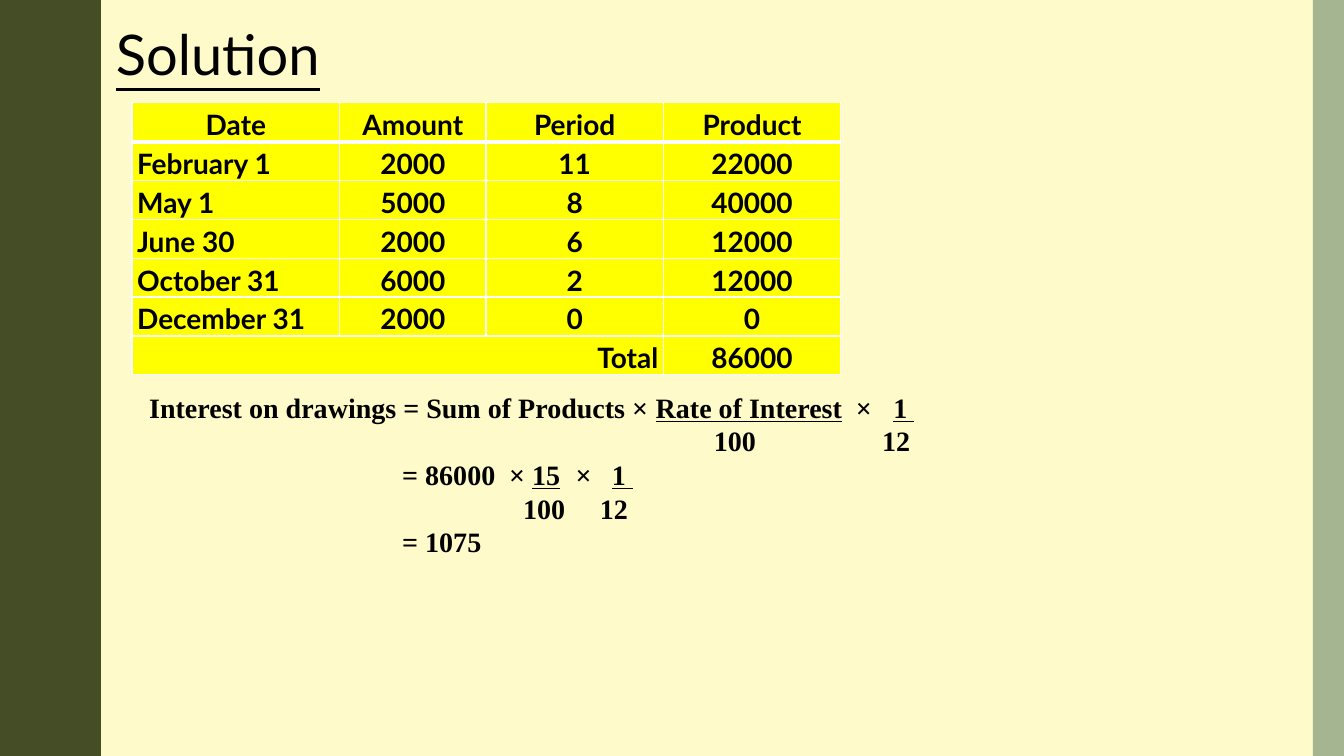
"""Build the interest on drawings solution slide."""
from lxml import etree
from pptx import Presentation
from pptx.dml.color import RGBColor
from pptx.enum.shapes import MSO_SHAPE as SHAPE
from pptx.enum.text import MSO_ANCHOR as ANCHOR, PP_ALIGN as ALIGN
from pptx.oxml.ns import qn
from pptx.util import Inches, Pt

TITLE = "Solution"
ROWS = [
    ("Date", "Amount", "Period", "Product"),
    ("February 1", "2000", "11", "22000"),
    ("May 1", "5000", "8", "40000"),
    ("June 30", "2000", "6", "12000"),
    ("October 31", "6000", "2", "12000"),
    ("December 31", "2000", "0", "0"),
    ("Total", "", "", "86000"),
]
COLS = [2.06, 1.45, 1.76, 1.76]
ROW_H = 0.38
FORMULA = [
    ([7.01, 7.38], [("Interest on drawings = Sum of Products × ", False),
                    ("Rate of Interest", True), ("\t×\t", False), ("1 ", True)]),
    ([5.6, 7.27], [("\t100\t12", False)]),
    ([2.51, 3.57, 4.23, 4.59], [("\t= 86000\t× ", False), ("15", True),
                                ("\t×\t", False), ("1 ", True)]),
    ([3.71, 4.47], [("\t100\t12", False)]),
    ([2.51], [("\t= 1075", False)]),
]
HALF_WAVE = [(0.78, 0), (0.78, 0.07), (0.79, 0.14), (0.8, 0.2), (0.81, 0.25),
             (0.83, 0.29), (0.85, 0.33), (0.87, 0.38), (0.89, 0.42), (0.91, 0.46),
             (0.93, 0.5), (0.95, 0.55), (0.96, 0.61), (0.97, 0.68), (0.97, 0.75)]
PERIOD, WAVES = 1.5, 5
WIDTH, HEIGHT = 13.33, 7.5


def color(value):
    return RGBColor.from_string(value)


def paint(sp, fill):
    sp.shadow.inherit = False
    sp.fill.solid()
    sp.fill.fore_color.rgb = color(fill)
    sp.line.fill.background()


def style(r, name, size, bold=False, underline=False):
    r.font.name = name
    r.font.size = Pt(size)
    r.font.bold = bold
    r.font.underline = underline
    r.font.color.rgb = color("000000")


def add_border(cell, side, width):
    ln = etree.Element(qn(f"a:ln{side}"), w=str(Pt(width)))
    fill = etree.SubElement(ln, qn("a:solidFill"))
    etree.SubElement(fill, qn("a:srgbClr"), val="FFFFFF")
    return ln


def add_tabs(p, stops):
    tabs = etree.SubElement(p._p.get_or_add_pPr(), qn("a:tabLst"))
    for stop in stops:
        etree.SubElement(tabs, qn("a:tab"), pos=str(Inches(stop)), algn="l")


def add_edges(slide):
    cycle = HALF_WAVE + [(x, PERIOD - y) for x, y in HALF_WAVE[-2::-1]]
    points = [(x, y + n * PERIOD) for n in range(WAVES) for x, y in cycle]
    fb = slide.shapes.build_freeform(0, 0, scale=Inches(1))
    fb.add_line_segments(points + [(0, HEIGHT)], close=True)
    paint(fb.convert_to_shape(), "444D26")
    sp = slide.shapes.add_shape(SHAPE.RECTANGLE, Inches(13.02), 0, Inches(0.31), Inches(HEIGHT))
    paint(sp, "A5B592")


def fill_cell(cell, text, row, col):
    cell.margin_left = cell.margin_right = Inches(0.05)
    cell.margin_top = cell.margin_bottom = 0
    p = cell.text_frame.paragraphs[0]
    p.text = text
    p.line_spacing = 1.15
    p.alignment = ALIGN.CENTER
    if col == 0 and row:
        p.alignment = ALIGN.RIGHT if row == len(ROWS) - 1 else ALIGN.JUSTIFY
    for r in p.runs:
        style(r, "Lato", 20, bold=True)
    tcPr = cell._tc.get_or_add_tcPr()
    thick = {"B": row == 0, "T": row == 1}
    for side in "LRTB":
        tcPr.append(add_border(cell, side, 3 if thick.get(side) else 1))
    cell.fill.solid()
    cell.fill.fore_color.rgb = color("FFFF00")


def add_products(slide):
    frame = slide.shapes.add_table(len(ROWS), len(COLS), Inches(1.31), Inches(1.02),
                                   Inches(sum(COLS)), Inches(ROW_H * len(ROWS)))
    table = frame.table
    table.first_row = table.horz_banding = False
    for column, width in zip(table.columns, COLS):
        column.width = Inches(width)
    for i, row in enumerate(ROWS):
        table.rows[i].height = Inches(ROW_H)
        for j, text in enumerate(row):
            fill_cell(table.cell(i, j), text, i, j)
    last = len(ROWS) - 1
    table.cell(last, 0).merge(table.cell(last, 2))


def add_formula(slide):
    sp = slide.shapes.add_textbox(Inches(1.41), Inches(3.83), Inches(8.26), Inches(1.75))
    tf = sp.text_frame
    tf.word_wrap = True
    tf.vertical_anchor = ANCHOR.MIDDLE
    tf.margin_left = tf.margin_right = Inches(0.07)
    tf.margin_top = tf.margin_bottom = Inches(0.04)
    for i, (stops, runs) in enumerate(FORMULA):
        p = tf.add_paragraph() if i else tf.paragraphs[0]
        add_tabs(p, stops)
        p.line_spacing = Pt(24)
        for text, underline in runs:
            r = p.add_run()
            r.text = text
            style(r, "Times New Roman", 20, True, underline)


def add_title(slide):
    sp = slide.shapes.add_textbox(Inches(1.04), Inches(0.14), Inches(2.24), Inches(0.77))
    tf = sp.text_frame
    tf.word_wrap = False
    p = tf.paragraphs[0]
    p.text = TITLE
    p.alignment = ALIGN.CENTER
    style(p.runs[0], "Lato", 40, underline=True)


def main():
    prs = Presentation()
    prs.slide_width, prs.slide_height = Inches(WIDTH), Inches(HEIGHT)
    slide = prs.slides.add_slide(prs.slide_layouts[6])
    slide.background.fill.solid()
    slide.background.fill.fore_color.rgb = color("FEFAC9")
    add_edges(slide)
    add_products(slide)
    add_formula(slide)
    add_title(slide)
    prs.save("out.pptx")


if __name__ == "__main__":
    main()
